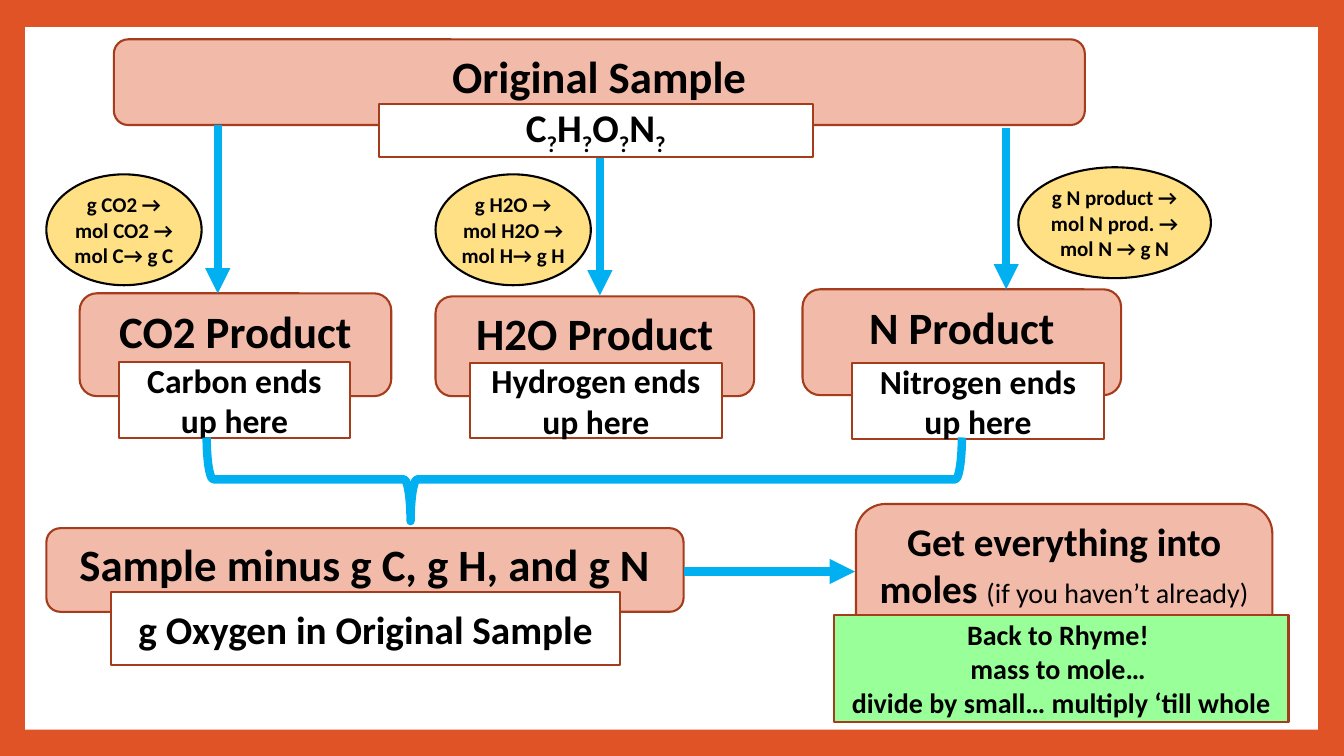
import pptx
import pptx.util
import pptx.dml.color
import pptx.enum.shapes
import pptx.enum.text
import pptx.oxml.ns
import lxml.etree

KIND = pptx.enum.shapes.MSO_SHAPE
ANCHOR = pptx.enum.text.MSO_ANCHOR
ALIGN = pptx.enum.text.PP_ALIGN
PEACH, WHITE, SAND, GREEN = "F2BAA9", "FFFFFF", "FFE085", "99FF99"
RUST, BLUE, BLACK, ORANGE = "A53D1D", "00B0F0", "000000", "DF5327"
SUB = -25000


def color(code):
    return pptx.dml.color.RGBColor.from_string(code)


def apply(target, values):
    for name, value in values.items():
        setattr(target, name, value)


class Board:
    cell = pptx.util.Inches(0.1)
    font = {"name": "Calibri", "bold": True}
    tight = dict.fromkeys(
        ("margin_left", "margin_top", "margin_right", "margin_bottom"), 0)

    def __init__(self, deck):
        self.slide = deck.slides.add_slide(deck.slide_layouts[6])
        fill = self.slide.background.fill
        fill.solid()
        fill.fore_color.rgb = color(ORANGE)

    def grid(self, spot):
        return [round(n * self.cell) for n in spot]

    def stroke(self, line, code, width):
        line.color.rgb = color(code)
        line.width = pptx.util.Pt(width)

    def shape(self, kind, spot, fill=None, edge=None, width=1.5):
        item = self.slide.shapes.add_shape(kind, *self.grid(spot))
        item.shadow.inherit = False
        if fill:
            item.fill.solid()
            item.fill.fore_color.rgb = color(fill)
        else:
            item.fill.background()
        if edge:
            self.stroke(item.line, edge, width)
        else:
            item.line.fill.background()
        return item

    def label(self, item, paras, size, frame):
        apply(item.text_frame, {"word_wrap": True, **frame})
        for count, runs in enumerate(paras):
            para = (item.text_frame.add_paragraph() if count
                    else item.text_frame.paragraphs[0])
            para.alignment = ALIGN.CENTER
            for text, style, base in runs:
                if text == "\n":
                    para.add_line_break()
                    continue
                run = para.add_run()
                run.text = text
                values = {**self.font, "size": pptx.util.Pt(size), **style}
                apply(run.font, values)
                run.font.color.rgb = color(BLACK)
                if base:
                    run._r.get_or_add_rPr().set("baseline", str(base))

    def head(self, spot, paras, size=32):
        item = self.shape(KIND.ROUNDED_RECTANGLE, spot, PEACH, RUST)
        self.label(item, paras, size, {"vertical_anchor": ANCHOR.TOP})

    def note(self, spot, paras, size, fill=WHITE):
        item = self.shape(KIND.RECTANGLE, spot, fill, RUST)
        self.label(item, paras, size, {"vertical_anchor": ANCHOR.MIDDLE})

    def oval(self, spot, paras):
        item = self.shape(KIND.OVAL, spot, SAND, BLACK)
        self.label(item, paras, 15,
                   {"vertical_anchor": ANCHOR.MIDDLE, **self.tight})

    def arrow(self, *ends):
        item = self.slide.shapes.add_connector(
            pptx.enum.shapes.MSO_CONNECTOR.STRAIGHT, *self.grid(ends))
        self.stroke(item.line, BLUE, 6)
        name = pptx.oxml.ns.qn
        tip = lxml.etree.SubElement(item.get_or_add_ln(), name("a:tailEnd"))
        tip.set("type", "triangle")
        lxml.etree.SubElement(item.element.spPr, name("a:effectLst"))

    def brace(self, spot, curve, point):
        item = self.shape(KIND.LEFT_BRACE, spot, None, BLUE, 6)
        item.rotation = 270
        item.adjustments[0] = curve
        item.adjustments[1] = point


def plain(*lines):
    return [[(line, {}, 0)] for line in lines]


def main():
    deck = pptx.Presentation()
    deck.slide_width = pptx.util.Inches(13.33)
    deck.slide_height = pptx.util.Inches(7.5)
    board = Board(deck)

    board.shape(KIND.RECTANGLE, (2.5, 2.7, 128.2, 69.7), WHITE)
    board.head((11.3, 3.9, 96.3, 8.5), plain("Original Sample"))

    products = [
        ("CO2", "Carbon", (7.9, 29.1, 30.9, 10.2), (11.8, 35.9, 22.9, 7.6),
         (4.6, 17.3, 15.4, 11), "g CO2 → mol CO2 → mol C→ g C",
         (21.6, 12.4, 21.6, 29.1)),
        ("H2O", "Hydrogen", (43.2, 29.4, 31.6, 9.9), (46.6, 36, 25, 7.5),
         (43.2, 17.3, 15.4, 11), "g H2O → mol H2O → mol H→ g H",
         (59.5, 15.3, 59.5, 29.3)),
        ("N", "Nitrogen", (79.6, 28.7, 31.6, 10.5), (84.5, 36, 25, 7.6),
         (101, 16.6, 19.1, 11), "g N product → mol N prod. → mol N → g N",
         (99.8, 12.7, 99.8, 28.7)),
    ]
    for gas, atom, top, low, side, steps, ends in products:
        board.head(top, plain(f"{gas} Product"))
        board.note(low, plain(f"{atom} ends up here"), 24)
        board.oval(side, plain(steps))
        board.arrow(*ends)

    formula = [run for atom in "CHON"
               for run in ((atom, {}, 0), ("?", {}, SUB))]
    board.note((37.6, 10.3, 43, 5.3), [formula], 28)

    board.head((4.6, 52.4, 63.2, 8.3), plain("Sample minus g C, g H, and g N"))
    board.note((11, 58.7, 50.5, 7.3), plain("g Oxygen in Original Sample"), 28)
    board.brace((53.8, 10.1, 8.3, 74.9), 0.08, 0.27)
    board.arrow(67.8, 56.7, 84.8, 56.7)

    aside = {"size": pptx.util.Pt(20), "bold": False}
    board.head((84.9, 50, 41.3, 17.6),
               [[("Get everything into moles ", {}, 0),
                 ("(if you haven’t already)", aside, 0)]], 28)
    rhyme = plain("Back to Rhyme! ", "mass to mole… ")
    rhyme[1] += [("\n", {}, 0),
                 ("divide by small… multiply ‘till whole", {}, 0)]
    board.note((82.7, 61, 45.1, 10.6), rhyme, 20, GREEN)

    deck.save("out.pptx")


if __name__ == "__main__":
    main()
